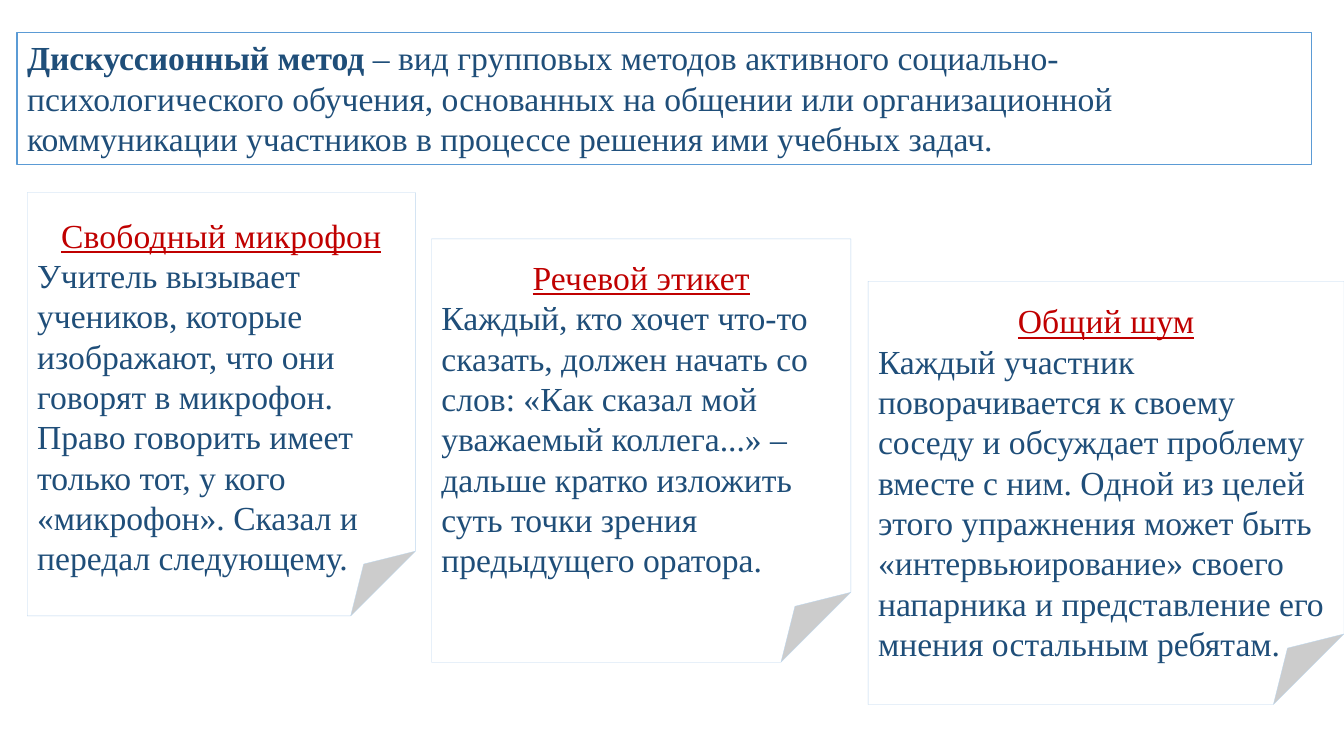
import pptx
import pptx.dml.color
import pptx.enum.shapes
import pptx.enum.text
import pptx.util
from pptx.util import Inches

COLORS = {
    "paper": "FFFFFF",
    "note_border": "BDD7EE",
    "definition_border": "5B9BD5",
    "heading": "C00000",
    "text": "1F4E79",
}
FONT = "Times New Roman"
SHAPES = pptx.enum.shapes.MSO_SHAPE
ALIGN = pptx.enum.text.PP_ALIGN

TERM = "Дискуссионный метод "
DEFINITION = (
    "– вид групповых методов активного социально-психологического обучения, "
    "основанных на общении или организационной коммуникации участников "
    "в процессе решения ими учебных задач."
)
NOTE_HEIGHT = 4.2
# left, top, width, space above the heading, heading, text
NOTES = [
    (0.27, 1.91, 3.85, 0.22, "Свободный микрофон",
     "Учитель вызывает учеников, которые изображают, что они говорят в микрофон. "
     "Право говорить имеет только тот, у кого «микрофон». "
     "Сказал и передал следующему."),
    (4.28, 2.37, 4.16, 0.18, "Речевой этикет",
     "Каждый, кто хочет что-то сказать, должен начать со слов: "
     "«Как сказал мой уважаемый коллега...» – дальше кратко изложить "
     "суть точки зрения предыдущего оратора."),
    (8.61, 2.79, 4.72, 0.19, "Общий шум",
     "Каждый участник поворачивается к своему соседу и обсуждает проблему "
     "вместе с ним. Одной из целей этого упражнения может быть "
     "«интервьюирование» своего напарника и представление его мнения "
     "остальным ребятам."),
]


def rgb(name):
    return pptx.dml.color.RGBColor.from_string(COLORS[name])


def add_panel(slide, preset, left, top, width, height, border, border_width):
    """Add a white outlined shape whose text starts at the top."""
    panel = slide.shapes.add_shape(
        preset, Inches(left), Inches(top), Inches(width), Inches(height))
    panel.shadow.inherit = False
    panel.fill.solid()
    panel.fill.fore_color.rgb = rgb("paper")
    panel.line.color.rgb = rgb(border)
    panel.line.width = pptx.util.Pt(border_width)
    frame = panel.text_frame
    frame.word_wrap = True
    frame.vertical_anchor = pptx.enum.text.MSO_ANCHOR.TOP
    return frame


def add_run(paragraph, text, color="text", bold=False, underline=False):
    run = paragraph.add_run()
    run.text = text
    run.font.name = FONT
    run.font.size = pptx.util.Pt(24)
    run.font.bold = bold
    run.font.underline = underline
    run.font.color.rgb = rgb(color)
    return run


def add_definition(slide):
    frame = add_panel(slide, SHAPES.RECTANGLE, 0.17, 0.32, 12.84, 1.31,
                      "definition_border", 1)
    paragraph = frame.paragraphs[0]
    paragraph.alignment = ALIGN.LEFT
    add_run(paragraph, TERM, bold=True)
    add_run(paragraph, DEFINITION)


def add_note(slide, left, top, width, space_above, heading, text):
    frame = add_panel(slide, SHAPES.FOLDED_CORNER, left, top, width, NOTE_HEIGHT,
                      "note_border", 0.25)
    frame.margin_top = Inches(space_above)
    title = frame.paragraphs[0]
    title.alignment = ALIGN.CENTER
    title_run = add_run(title, heading, color="heading", underline=True)
    title_run.font._element.set("spc", "10")
    body = frame.add_paragraph()
    body.alignment = ALIGN.LEFT
    add_run(body, text)


def main():
    presentation = pptx.Presentation()
    presentation.slide_width = Inches(13.33)
    presentation.slide_height = Inches(7.5)
    slide = presentation.slides.add_slide(presentation.slide_layouts[6])
    for note in NOTES:
        add_note(slide, *note)
    add_definition(slide)
    presentation.save("out.pptx")


if __name__ == "__main__":
    main()
